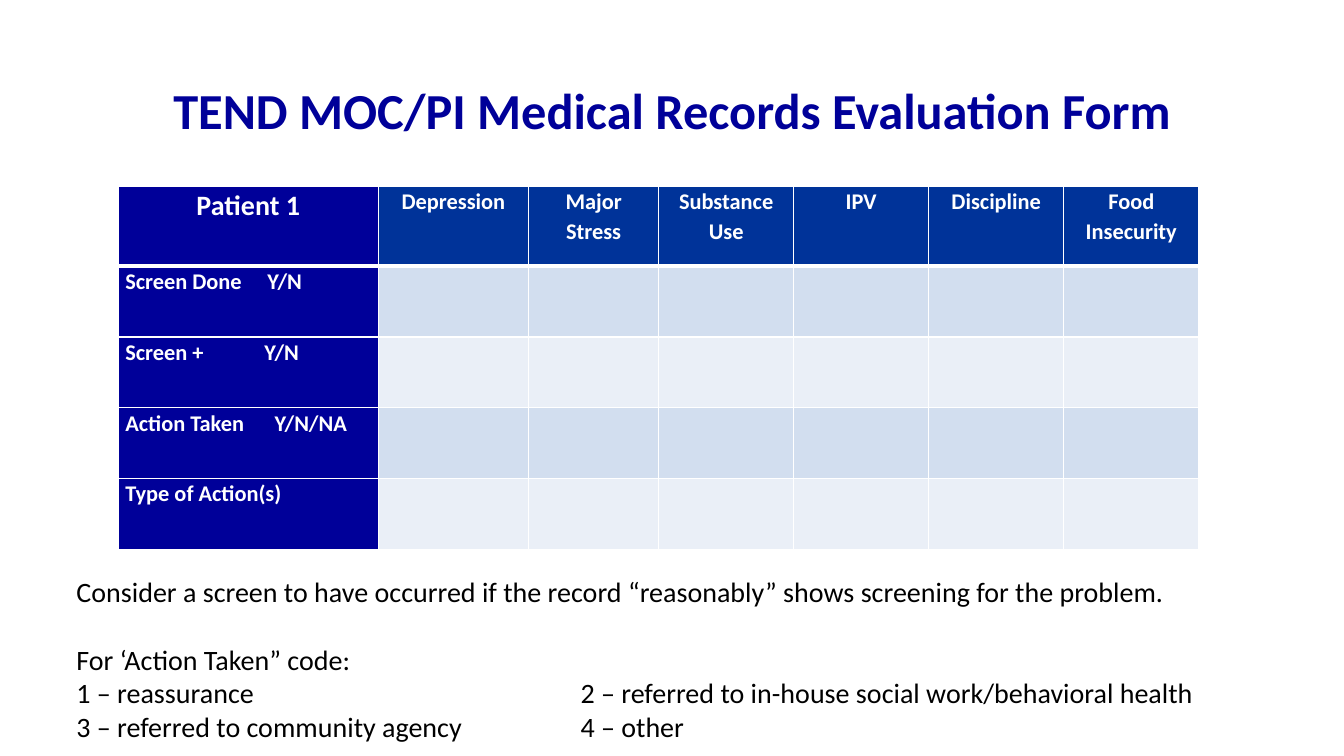
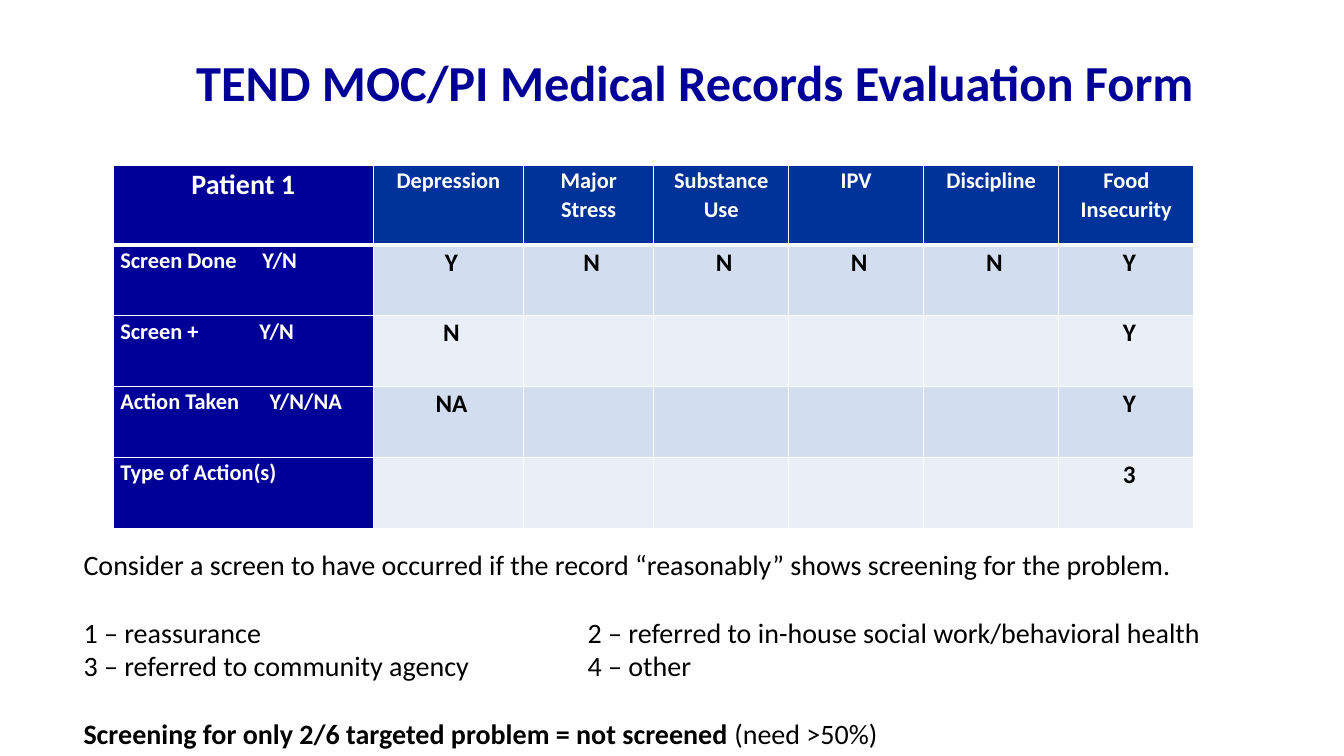
from lxml import etree
from pptx import Presentation
from pptx.dml.color import RGBColor
from pptx.enum.text import MSO_ANCHOR, PP_ALIGN
from pptx.oxml.ns import qn
from pptx.util import Inches, Pt

CENTER, LEFT = PP_ALIGN.CENTER, PP_ALIGN.LEFT
MIDDLE = MSO_ANCHOR.MIDDLE
FONT = "Calibri"
C = {"navy": "000099", "blue": "003399", "band": "D2DEEF",
     "pale": "EAEFF7", "white": "FFFFFF", "black": "000000"}

prs = Presentation()
prs.slide_width, prs.slide_height = Inches(13.33), Inches(7.5)
PX, PY = prs.slide_width / 100, prs.slide_height / 100  # one percent of the slide


def write(p, text, size=20, color="black", bold=False, align=LEFT,
          spacing=None, before=0, tab=None):
    """Add one run to a paragraph and format both; tab is a stop in inches."""
    p.alignment, p.space_before = align, Pt(before)
    if spacing:
        p.line_spacing = spacing
    if tab:
        tabs = etree.SubElement(p._p.get_or_add_pPr(), qn("a:tabLst"))
        etree.SubElement(tabs, qn("a:tab"), pos=str(Inches(tab)), algn="l")
    r = p.add_run()
    r.text = text
    r.font.name, r.font.size, r.font.bold = FONT, Pt(size), bold
    r.font.color.rgb = RGBColor.from_string(C[color])


def paint(cell, color, bottom):
    """Fill a cell and give it white borders; bottom is in points."""
    tc = cell._tc.get_or_add_tcPr()
    for side, width in (("L", 1), ("R", 1), ("T", 1), ("B", bottom)):
        ln = etree.SubElement(tc, qn(f"a:ln{side}"), w=str(Pt(width)))
        fill = etree.SubElement(ln, qn("a:solidFill"))
        etree.SubElement(fill, qn("a:srgbClr"), val=C["white"])
    cell.fill.solid()
    cell.fill.fore_color.rgb = RGBColor.from_string(C[color])


# Shared content; sizes are percentages of the slide
TITLE = "TEND MOC/PI Medical Records Evaluation Form"
COLS = [19.35, 11.18, 9.68] + [10.05] * 4
ROWS = [10.53] + [9.38] * 4
HEADS = ["Patient 1", "Depression", "Major Stress", "Substance\nUse", "IPV",
         "Discipline", "Food\nInsecurity"]
LABELS = [("Screen Done\tY/N", 1.41), ("Screen +\tY/N", 1.38),
          ("Action Taken\tY/N/NA", 1.48), ("Type of Action(s)", None)]
SCREEN = "Consider a screen to have occurred if the record “reasonably” shows screening for the problem."
CODES = ["1 – reassurance\t2 – referred to in-house social work/behavioral health",
         "3 – referred to community agency\t4 – other"]
GAP = 24.4  # one line of 20 pt text

# What differs: places (left, top), answers by (row, column), notes as
# (space before, runs)
slides = [
    dict(title=(6.9, 5.33), table=(8.8, 24.67), notes=(4.95, 75.33),
         answers={},
         lines=[(0, [SCREEN]), (GAP, ["For ‘Action Taken” code:"]),
                (0, [CODES[0]]), (0, [CODES[1]])]),
    dict(title=(8.6, 1.6), table=(8.43, 21.87), notes=(5.48, 71.73),
         answers={(1, 1): "Y", (1, 2): "N", (1, 3): "N", (1, 4): "N",
                  (1, 5): "N", (1, 6): "Y", (2, 1): "N", (2, 6): "Y",
                  (3, 1): "NA", (3, 6): "Y", (4, 6): "3"},
         lines=[(0, [SCREEN]), (GAP, [CODES[0]]), (0, [CODES[1]]),
                (GAP, ["Screening for only 2/6 targeted problem = not screened ",
                       "(need >50%)"])]),
]

for d in slides:
    s = prs.slides.add_slide(prs.slide_layouts[6])

    # Title
    x, y = d["title"]
    tf = s.shapes.add_textbox(int(x * PX), int(y * PY),
                              int(86.25 * PX), int(19.33 * PY)).text_frame
    tf.word_wrap, tf.vertical_anchor = True, MIDDLE
    write(tf.paragraphs[0], TITLE, size=36, color="navy", bold=True,
          align=CENTER, spacing=0.9)

    # Table
    x, y = d["table"]
    tbl = s.shapes.add_table(len(ROWS), len(COLS), int(x * PX), int(y * PY),
                             int(sum(COLS) * PX), int(sum(ROWS) * PY)).table
    for col, w in zip(tbl.columns, COLS):
        col.width = int(w * PX)
    for i, h in enumerate(ROWS):
        tbl.rows[i].height = int(h * PY)
        for j in range(len(COLS)):
            cell = tbl.cell(i, j)
            cell.margin_left = cell.margin_right = Inches(0.07)
            cell.margin_top = cell.margin_bottom = 0
            fill = "navy" if j == 0 else "blue" if i == 0 else "band" if i % 2 else "pale"
            paint(cell, fill, bottom=1 if i else 3)
            p = cell.text_frame.paragraphs[0]
            if i == 0:
                for n, line in enumerate(HEADS[j].split("\n")):
                    p = cell.text_frame.add_paragraph() if n else p
                    write(p, line, size=16 if j else 20, color="white",
                          bold=True, align=CENTER, spacing=1.07)
            elif j == 0:
                label, stop = LABELS[i - 1]
                write(p, label, size=16, color="white", bold=True,
                      spacing=1.07, tab=stop)
            elif (i, j) in d["answers"]:
                cell.margin_left = Inches(0.13)
                write(p, d["answers"][i, j], size=18, bold=True,
                      align=CENTER, spacing=1.07)

    # Notes
    x, y = d["notes"]
    tf = s.shapes.add_textbox(int(x * PX), int(y * PY), int(92 * PX),
                              int((100 - y) * PY)).text_frame
    tf.word_wrap = True
    for n, (before, runs) in enumerate(d["lines"]):
        p = tf.add_paragraph() if n else tf.paragraphs[0]
        for k, text in enumerate(runs):
            write(p, text, bold=len(runs) > 1 and k == 0, before=before,
                  tab=5 if "\t" in text else None)

prs.save("out.pptx")
